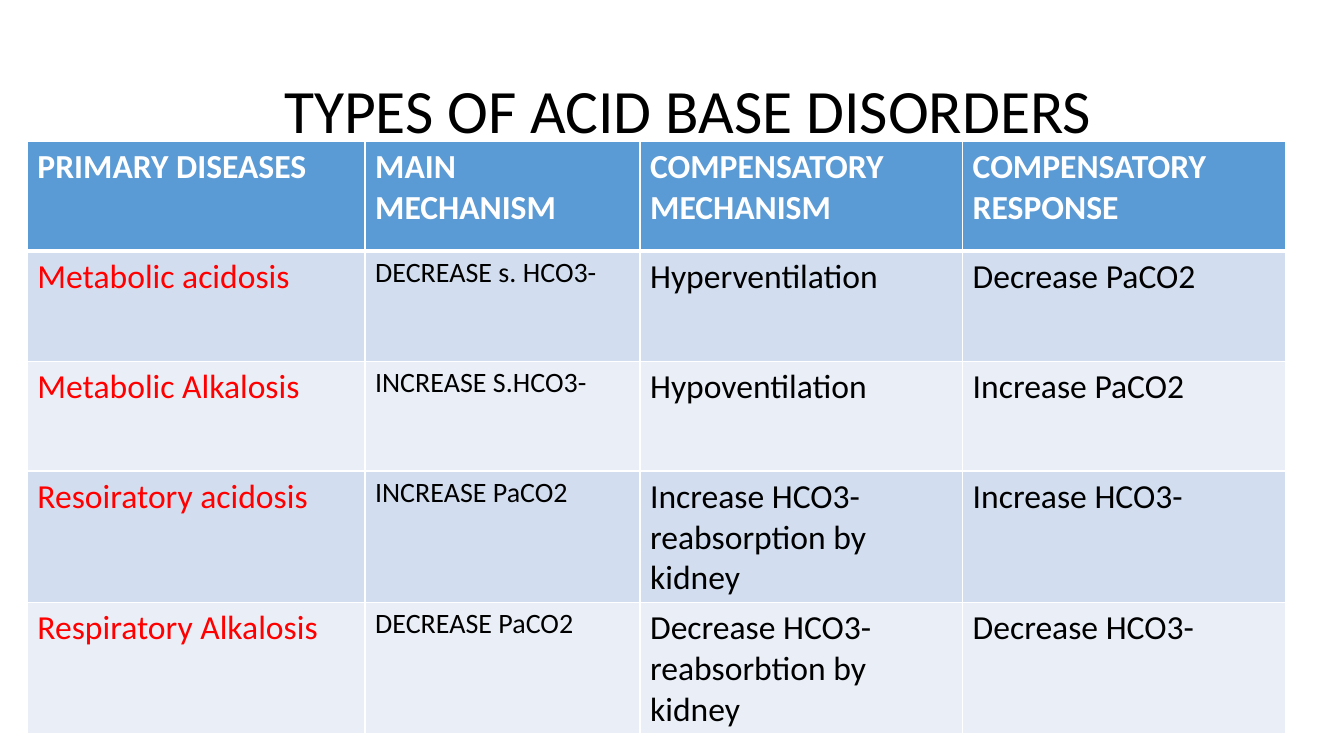
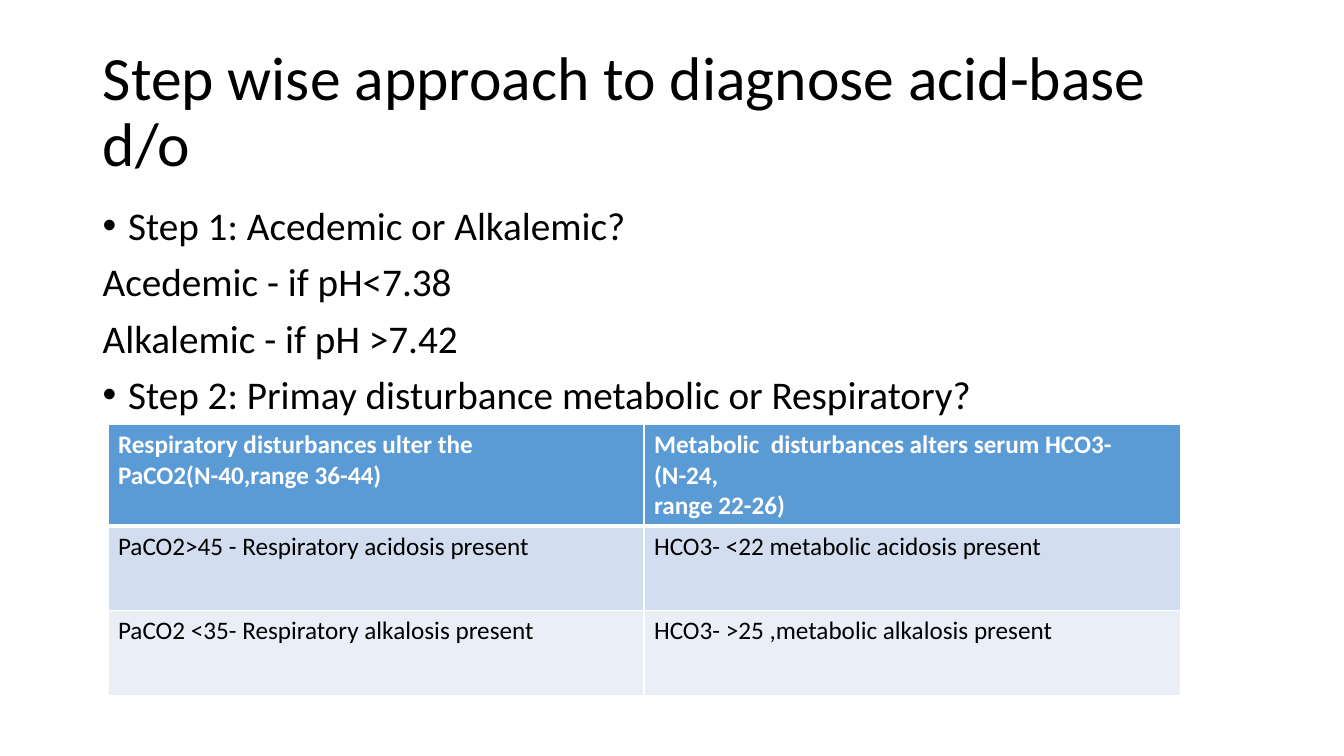
"""Build two slides on acid-base disorders, each with a title and a table."""
from dataclasses import dataclass

from lxml import etree
from pptx import Presentation
from pptx.dml.color import RGBColor
from pptx.enum.text import MSO_ANCHOR
from pptx.oxml.ns import qn
from pptx.util import Cm, Pt

MIDDLE, TOP = MSO_ANCHOR.MIDDLE, MSO_ANCHOR.TOP


@dataclass(frozen=True)
class Theme:
    font: str = "Calibri"
    text: str = "000000"
    white: str = "FFFFFF"
    accent: str = "FF0000"
    header: str = "5B9BD5"
    bands: tuple = ("D2DEEF", "EAEFF7")
    title_size: int = 44
    body_size: int = 28
    line_spacing: float = 0.9
    space_before: int = 10
    thin: int = 1
    thick: int = 3


THEME = Theme()
SLIDE_SIZE = (33.87, 19.05)
TITLE_BOX = (2.34, 1.02, 29.21, 3.68)
BODY_BOX = (2.34, 5.08, 29.21, 13.13)
BULLET_INDENT = 0.64
INSET = 0.25

SLIDES = [
    {
        "title": "TYPES OF ACID BASE DISORDERS",
        "title_indent": 4.57,
        "body": [],
        "table": {
            "at": (0.69, 3.56),
            "cols": [8.51, 6.93, 8.13, 8.15],
            "rows": [2.77, 2.77, 2.77, 3.3, 3.3],
            "header_size": 24,
            "sizes": [24, 20, 24, 24],
            "colors": [THEME.accent, THEME.text, THEME.text, THEME.text],
            "cells": [
                ["PRIMARY DISEASES", "MAIN MECHANISM",
                 "COMPENSATORY MECHANISM", "COMPENSATORY RESPONSE"],
                ["Metabolic acidosis", "DECREASE s. HCO3-",
                 "Hyperventilation", "Decrease PaCO2"],
                ["Metabolic Alkalosis", "INCREASE S.HCO3-",
                 "Hypoventilation", "Increase PaCO2"],
                ["Resoiratory acidosis", "INCREASE PaCO2",
                 "Increase HCO3- reabsorption by kidney", "Increase HCO3-"],
                ["Respiratory Alkalosis", "DECREASE PaCO2",
                 "Decrease HCO3- reabsorbtion by kidney", "Decrease HCO3-"],
            ],
        },
    },
    {
        "title": "Step wise approach to diagnose acid-base d/o",
        "title_indent": 0,
        "body": [
            ("Step 1: Acedemic or Alkalemic?", True),
            ("Acedemic - if pH<7.38", False),
            ("Alkalemic - if pH >7.42", False),
            ("Step 2: Primay disturbance metabolic or Respiratory?", True),
        ],
        "table": {
            "at": (2.72, 10.69),
            "cols": [13.51, 13.51],
            "rows": [2.57, 2.13, 2.13],
            "header_size": 18,
            "sizes": [18, 18],
            "colors": [THEME.text, THEME.text],
            "cells": [
                ["Respiratory disturbances ulter the PaCO2(N-40,range 36-44)",
                 "Metabolic  disturbances alters serum HCO3-(N-24,\nrange 22-26)"],
                ["PaCO2>45 - Respiratory acidosis present",
                 "HCO3- <22 metabolic acidosis present"],
                ["PaCO2 <35- Respiratory alkalosis present",
                 "HCO3- >25 ,metabolic alkalosis present"],
            ],
        },
    },
]


def add_run(p, text, size, color=THEME.text, bold=False):
    r = p.add_run()
    r.text = text
    r.font.name = THEME.font
    r.font.size = Pt(size)
    r.font.bold = bold
    r.font.color.rgb = RGBColor.from_string(color)


def next_paragraph(tf, index):
    return tf.add_paragraph() if index else tf.paragraphs[0]


def add_bullet(p):
    pPr = p._p.get_or_add_pPr()
    pPr.set("marL", str(Cm(BULLET_INDENT)))
    pPr.set("indent", str(-Cm(BULLET_INDENT)))
    etree.SubElement(pPr, qn("a:buFont"), typeface="Arial")
    etree.SubElement(pPr, qn("a:buChar"), char="•")


def add_text(s, box, lines, size, anchor, indent=0):
    tf = s.shapes.add_textbox(*map(Cm, box)).text_frame
    tf.word_wrap = True
    tf.vertical_anchor = anchor
    tf.margin_left = Cm(INSET + indent)
    for i, (text, bulleted) in enumerate(lines):
        p = next_paragraph(tf, i)
        if bulleted:
            add_bullet(p)
        p.line_spacing = THEME.line_spacing
        if i:
            p.space_before = Pt(THEME.space_before)
        add_run(p, text, size)


def set_borders(cell, top, bottom):
    tcPr = cell._tc.get_or_add_tcPr()
    widths = {"L": THEME.thin, "R": THEME.thin, "T": top, "B": bottom}
    for side, width in widths.items():
        ln = etree.SubElement(tcPr, qn(f"a:ln{side}"), w=str(Pt(width)))
        fill = etree.SubElement(ln, qn("a:solidFill"))
        etree.SubElement(fill, qn("a:srgbClr"), val=THEME.white)


def fill_cell(cell, text, fill, size, color, bold):
    cell.fill.solid()
    cell.fill.fore_color.rgb = RGBColor.from_string(fill)
    for i, line in enumerate(text.split("\n")):
        add_run(next_paragraph(cell.text_frame, i), line, size, color, bold)


def add_data_table(s, spec):
    cols, rows = spec["cols"], spec["rows"]
    box = (*spec["at"], sum(cols), sum(rows))
    table = s.shapes.add_table(len(rows), len(cols), *map(Cm, box)).table
    for column, width in zip(table.columns, cols):
        column.width = Cm(width)
    for i, (height, texts) in enumerate(zip(rows, spec["cells"])):
        table.rows[i].height = Cm(height)
        for j, text in enumerate(texts):
            cell = table.cell(i, j)
            set_borders(cell, THEME.thick if i == 1 else THEME.thin,
                        THEME.thick if i == 0 else THEME.thin)
            if i == 0:
                fill_cell(cell, text, THEME.header, spec["header_size"], THEME.white, True)
            else:
                fill_cell(cell, text, THEME.bands[(i - 1) % 2],
                          spec["sizes"][j], spec["colors"][j], False)


def main():
    prs = Presentation()
    prs.slide_width, prs.slide_height = map(Cm, SLIDE_SIZE)
    for content in SLIDES:
        s = prs.slides.add_slide(prs.slide_layouts[6])
        add_text(s, TITLE_BOX, [(content["title"], False)], THEME.title_size,
                 MIDDLE, content["title_indent"])
        if content["body"]:
            add_text(s, BODY_BOX, content["body"], THEME.body_size, TOP)
        add_data_table(s, content["table"])
    prs.save("out.pptx")


if __name__ == "__main__":
    main()
